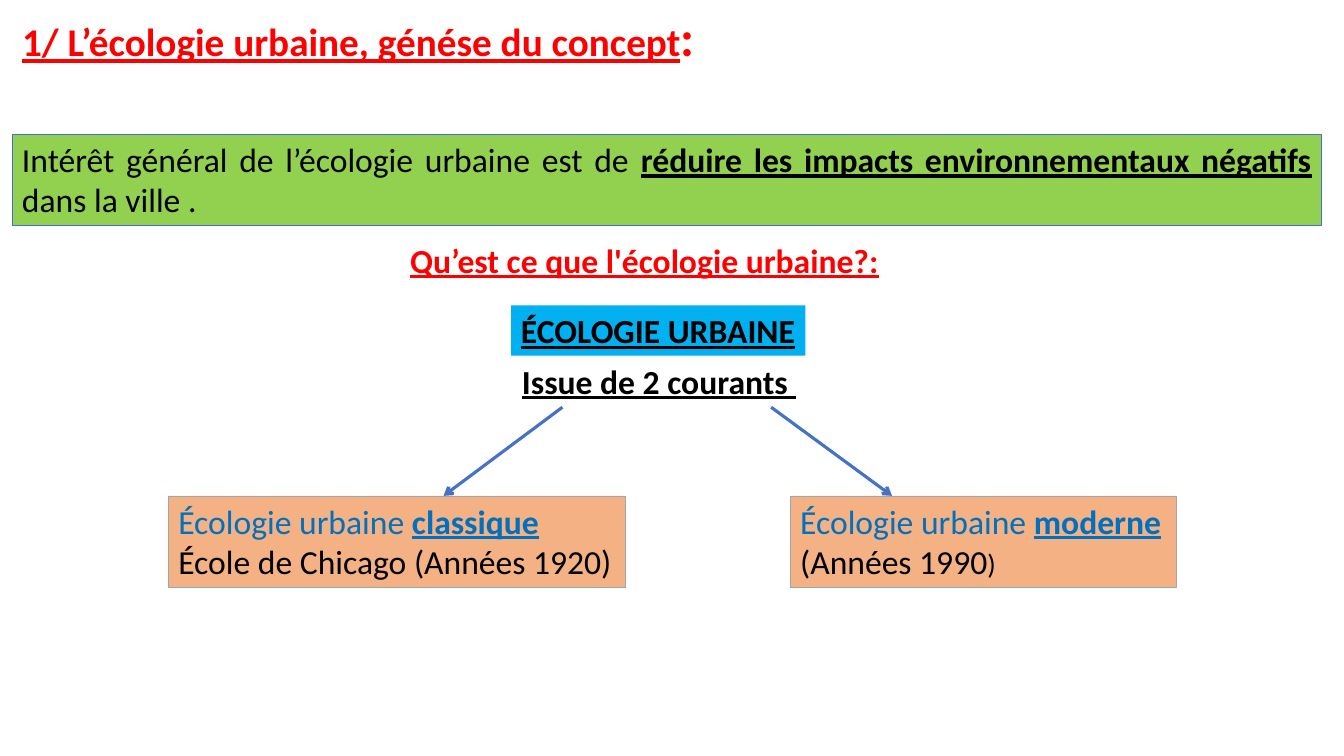
from lxml import etree
from pptx import Presentation
from pptx import util as u
from pptx.dml.color import RGBColor
from pptx.enum import shapes, text
from pptx.oxml import ns

COLORS = {
    "white": "FFFFFF", "black": "000000", "red": "FF0000", "blue": "0070C0",
    "sky": "00B0F0", "green": "92D050", "peach": "F4B183",
    "gray": "A5A5A5", "accent": "4472C4",
}


def rgb(name):
    return RGBColor.from_string(COLORS[name])


class Board:
    FONT = "Calibri"
    SIZE = 24
    COLUMNS, ROWS = 40, 30

    def __init__(self, prs):
        self.col = prs.slide_width / self.COLUMNS
        self.row = prs.slide_height / self.ROWS
        self.s = prs.slides.add_slide(prs.slide_layouts[5])

    def place(self, x, y, w, h):
        return (round(x * self.col), round(y * self.row),
                round(w * self.col), round(h * self.row))

    def add_text(self, p, content, color="black", strong=False, underline=None, size=SIZE):
        r = p.add_run()
        r.text = content
        r.font.name = self.FONT
        r.font.size = u.Pt(size)
        r.font.color.rgb = rgb(color)
        r.font.bold = strong
        r.font.underline = strong if underline is None else underline

    def fill_frame(self, tf, paragraphs, align=text.PP_ALIGN.LEFT, wrap=True):
        tf.word_wrap = wrap
        tf.vertical_anchor = text.MSO_ANCHOR.TOP
        for i, runs in enumerate(paragraphs):
            p = tf.add_paragraph() if i else tf.paragraphs[0]
            p.alignment = align
            for options in runs:
                self.add_text(p, **options)

    def title(self, box, runs):
        sp = self.s.shapes.title
        sp.left, sp.top, sp.width, sp.height = self.place(*box)
        sp.fill.solid()
        sp.fill.fore_color.rgb = rgb("white")
        tf = sp.text_frame
        tf.auto_size = text.MSO_AUTO_SIZE.NONE
        self.fill_frame(tf, [runs])
        p = tf.paragraphs[0]
        p.line_spacing = 0.8
        p.space_before = u.Pt(10)

    def label(self, box, runs):
        sp = self.s.shapes.add_textbox(*self.place(*box))
        self.fill_frame(sp.text_frame, [runs])

    def panel(self, box, paragraphs, fill, line=None, **layout):
        sp = self.s.shapes.add_shape(shapes.MSO_SHAPE.RECTANGLE, *self.place(*box))
        sp.shadow.inherit = False
        sp.fill.solid()
        sp.fill.fore_color.rgb = rgb(fill)
        if line:
            sp.line.color.rgb = rgb(line)
            sp.line.width = u.Pt(0.5)
        else:
            sp.line.fill.background()
        self.fill_frame(sp.text_frame, paragraphs, **layout)

    def arrow(self, x1, y1, x2, y2):
        start, end = self.place(x1, y1, 0, 0)[:2], self.place(x2, y2, 0, 0)[:2]
        c = self.s.shapes.add_connector(shapes.MSO_CONNECTOR.STRAIGHT, *start, *end)
        c.line.color.rgb = rgb("accent")
        c.line.width = u.Pt(2.25)
        sp_pr = c._element.spPr
        tail = etree.SubElement(sp_pr.find(ns.qn("a:ln")), ns.qn("a:tailEnd"))
        tail.set("type", "arrow")
        etree.SubElement(sp_pr, ns.qn("a:effectLst"))


def main():
    prs = Presentation()
    prs.slide_width, prs.slide_height = u.Inches(13.33), u.Inches(7.5)
    board = Board(prs)

    board.title((0.36, 0.52, 30, 2.4), [
        dict(content="1/ L’écologie urbaine, génése du concept",
             color="red", strong=True, size=28),
        dict(content=":", color="red", strong=True, underline=False, size=36),
    ])
    board.label((11.91, 9.32, 16.17, 2), [
        dict(content="Qu’est ce que l'écologie urbaine?:", color="red", strong=True)])
    board.panel((15.21, 12.12, 8.76, 2),
                [[dict(content="ÉCOLOGIE URBAINE", strong=True)]], "sky", wrap=False)
    board.label((15.24, 14.12, 9.18, 2), [
        dict(content="Issue de 2 courants ", strong=True)])

    arrow_top, branch_top, panel_height = 16.16, 19.68, 3.64
    for start, end in ((16.74, 13.2), (22.95, 26.55)):
        board.arrow(start, arrow_top, end, branch_top)

    classic = [[dict(content="École de Chicago (Années 1920)")]]
    modern = [[dict(content="(Années 1990"), dict(content=")", size=20)]]
    for x, w, current, details in ((5.01, 13.59, "classique", classic),
                                   (23.52, 11.49, "moderne", modern)):
        heading = [dict(content="Écologie urbaine ", color="blue"),
                   dict(content=current, color="blue", strong=True)]
        board.panel((x, branch_top, w, panel_height), [heading] + details,
                    "peach", "gray")

    board.panel((0.36, 5.32, 38.97, panel_height), [[
        dict(content="Intérêt général de l’écologie urbaine est de "),
        dict(content="réduire les impacts environnementaux négatifs ", strong=True),
        dict(content="dans la ville ."),
    ]], "green", "accent", align=text.PP_ALIGN.JUSTIFY)

    prs.save("out.pptx")


if __name__ == "__main__":
    main()
